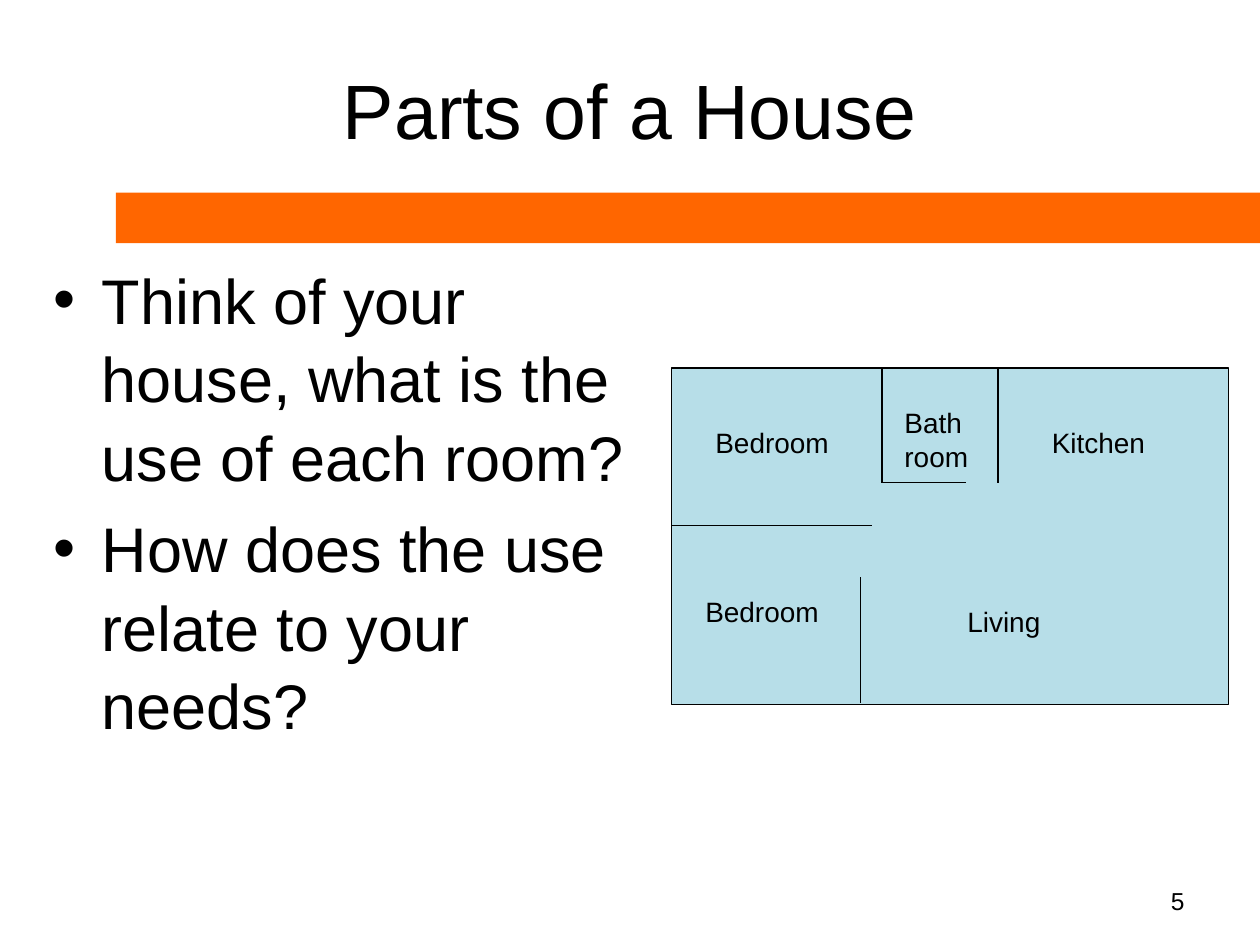
from lxml import etree
from pptx import Presentation
from pptx.dml.color import RGBColor as Rgb
from pptx.enum.shapes import MSO_CONNECTOR as Conn, MSO_SHAPE as Shape
from pptx.enum.text import MSO_ANCHOR as Anchor, MSO_AUTO_SIZE as Auto, PP_ALIGN as Align
from pptx.oxml.ns import qn
from pptx.util import Inches, Pt

COLORS = {"ink": "000000", "bar": "FF6600", "floor": "B7DEE8"}
FONT = "Arial"

POINTS = [
    "Think of your house, what is the use of each room?",
    "How does the use relate to your needs?",
]
HOUSE = (5.33, 2.92, 4.42, 2.67)
WALLS = [
    (7, 2.92, 7, 3.83),
    (5.33, 4.17, 6.92, 4.17),
    (6.83, 4.58, 6.83, 5.58),
    (7, 3.83, 7.67, 3.83),
    (7.92, 2.92, 7.92, 3.83),
]
ROOMS = [
    ("Living", 7.58, 4.75, 1.83, 0.37),
    ("Kitchen", 8.25, 3.33, 1.25, 0.37),
    ("Bedroom", 5.58, 3.33, 1.17, 0.37),
    ("Bedroom", 5.5, 4.67, 1.17, 0.37),
    ("Bath room", 7.08, 3.17, 0.75, 0.64),
]


def color(name):
    return Rgb.from_string(COLORS[name])


def paint(shape, name):
    shape.fill.solid()
    shape.fill.fore_color.rgb = color(name)


def style(para, size, align=Align.LEFT):
    para.alignment = align
    for run in para.runs:
        run.font.name = FONT
        run.font.size = Pt(size)
        run.font.color.rgb = color("ink")


def add_text(shapes, text, box, size, align=Align.LEFT, anchor=Anchor.TOP):
    """Add a wrapped text box; each line of text is a paragraph."""
    shape = shapes.add_textbox(*map(Inches, box))
    frame = shape.text_frame
    frame.word_wrap = True
    frame.vertical_anchor = anchor
    frame.text = text
    for para in frame.paragraphs:
        style(para, size, align)
    return shape


def add_rect(shapes, box, fill, line=None):
    rect = shapes.add_shape(Shape.RECTANGLE, *map(Inches, box))
    rect.shadow.inherit = False
    paint(rect, fill)
    if line:
        rect.line.color.rgb = color(line)
        rect.line.width = Pt(0.75)
    else:
        rect.line.fill.background()


def add_wall(shapes, ends):
    wall = shapes.add_connector(Conn.STRAIGHT, *map(Inches, ends))
    wall.line.color.rgb = color("ink")
    wall.line.width = Pt(0.75)
    etree.SubElement(wall._element.spPr, qn("a:effectLst"))


def add_room(shapes, name, *box):
    room = add_text(shapes, name, box, 16)
    room.text_frame.auto_size = Auto.SHAPE_TO_FIT_TEXT
    paint(room, "floor")


def add_bullets(shapes, items, box, size):
    body = add_text(shapes, "\n".join(items), box, size)
    for i, para in enumerate(body.text_frame.paragraphs):
        para.line_spacing = 1.04
        if i:
            para.space_before = Pt(size * 0.2)
        props = para._p.get_or_add_pPr()
        props.set("marL", str(Inches(0.38)))
        props.set("indent", str(Inches(-0.38)))
        etree.SubElement(props, qn("a:buFont"), typeface=FONT)
        etree.SubElement(props, qn("a:buChar"), char="•")


def add_plan(shapes):
    plan = shapes.add_group_shape().shapes
    add_rect(plan, HOUSE, "floor", "ink")
    for ends in WALLS:
        add_wall(plan, ends)
    for room in ROOMS:
        add_room(plan, *room)


def main():
    deck = Presentation()
    deck.slide_width, deck.slide_height = Inches(10), Inches(7.5)
    shapes = deck.slides.add_slide(deck.slide_layouts[6]).shapes
    add_rect(shapes, (0.92, 1.53, 9.08, 0.4), "bar")
    add_text(shapes, "5", (7.17, 6.95, 2.33, 0.4), 14, Align.RIGHT, Anchor.MIDDLE)
    add_text(shapes, "Parts of a House", (0.5, 0.3, 9, 1.12), 44,
             Align.CENTER, Anchor.MIDDLE)
    add_bullets(shapes, POINTS, (0.33, 2, 4.83, 4.7), 36)
    add_plan(shapes)
    deck.save("out.pptx")


if __name__ == "__main__":
    main()
